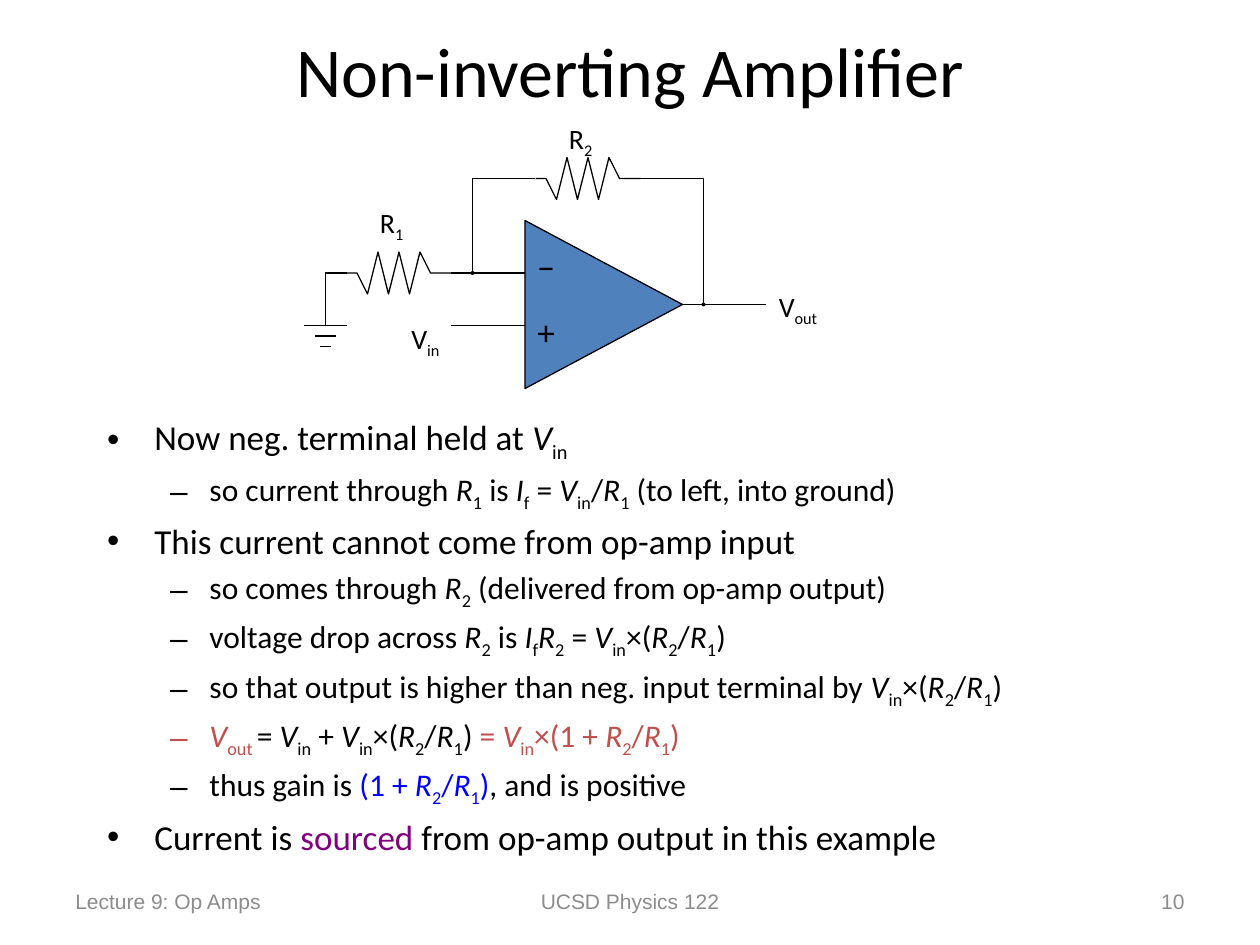
import pptx
import pptx.util
import pptx.dml.color
import pptx.enum.shapes
import pptx.enum.text
import pptx.oxml

RGB = pptx.dml.color.RGBColor
SHAPE = pptx.enum.shapes.MSO_SHAPE
ALIGN = pptx.enum.text.PP_ALIGN
ANCHOR = pptx.enum.text.MSO_ANCHOR
FIT = pptx.enum.text.MSO_AUTO_SIZE
Inches, Pt = pptx.util.Inches, pptx.util.Pt

BLACK = RGB(0x00, 0x00, 0x00)
GRAY = RGB(0x8C, 0x8C, 0x8C)
STEEL = RGB(0x4F, 0x81, 0xBD)
RED = RGB(0xC0, 0x50, 0x4D)
BLUE = RGB(0x00, 0x00, 0xFF)
PURPLE = RGB(0x80, 0x00, 0x80)
THIN = Pt(0.75)
UNIT = Inches(1) / 12  # one cell of the circuit grid

RATIO = "|*R|_2|/|*R|_1|)"
DROP = "|*V|_in|×(" + RATIO
# Level, then coloured pieces of marked text (see write)
POINTS = [
    (0, [(BLACK, "Now neg. terminal held at |*V|_in")]),
    (1, [(BLACK, "so current through |*R|_1| is |*I|_f| = |*V|_in|/|*R|_1"
                 "| (to left, into ground)")]),
    (0, [(BLACK, "This current cannot come from op-amp input")]),
    (1, [(BLACK, "so comes through |*R|_2| (delivered from op-amp output)")]),
    (1, [(BLACK, "voltage drop across |*R|_2| is |*I|_f|*R|_2| = " + DROP)]),
    (1, [(BLACK, "so that output is higher than neg. input terminal by "
                 + DROP)]),
    (1, [(RED, "*V|_out "), (BLACK, "= |*V|_in| + " + DROP + "| "),
         (RED, "= |*V|_in|×(1 + " + RATIO)]),
    (1, [(BLACK, "thus gain is "), (BLUE, "(1 + " + RATIO),
         (BLACK, ", and is positive")]),
    (0, [(BLACK, "Current is "), (PURPLE, "sourced"),
         (BLACK, " from op-amp output in this example")]),
]


def write(para, text, size, color=BLACK, face="Calibri"):
    """Add runs parted by |; a leading * means italic, _ means subscript."""
    for part in filter(None, text.split("|")):
        run = para.add_run()
        run.text = part.lstrip("*_")
        font = run.font
        font.name, font.size = face, Pt(size)
        font.color.rgb = color
        if part[0] == "*":
            font.italic = True
        elif part[0] == "_":
            run._r.get_or_add_rPr().set("baseline", "-25000")


def ink(shape, fill=None):
    shape.shadow.inherit = False
    shape.line.color.rgb = BLACK
    shape.line.width = THIN
    if fill is None:
        shape.fill.background()
    else:
        shape.fill.solid()
        shape.fill.fore_color.rgb = fill


class Grid:
    """Draws circuit parts at columns and rows counted from a corner."""

    def __init__(self, slide, left, top):
        self.shapes, self.left, self.top = slide.shapes, left, top

    def spot(self, col, row):
        return round(self.left + col * UNIT), round(self.top + row * UNIT)

    def wire(self, start, end):
        line = self.shapes.add_connector(
            pptx.enum.shapes.MSO_CONNECTOR.STRAIGHT,
            *self.spot(*start), *self.spot(*end))
        line.line.color.rgb = BLACK
        line.line.width = THIN
        line._element.spPr.append(
            pptx.oxml.parse_xml(
                '<a:effectLst xmlns:a='
                '"http://schemas.openxmlformats.org/drawingml/2006/main"/>'))

    def trace(self, points):
        first, *rest = [self.spot(*point) for point in points]
        pen = self.shapes.build_freeform(*first)
        pen.add_line_segments(rest, close=False)
        ink(pen.convert_to_shape())

    def coil(self, col, row):
        """Zigzag resistor, ten columns wide."""
        rise = [0, 0, 2, -2, 2, -2, 2, -2, 0]
        points = [(col + i, row + dy) for i, dy in enumerate(rise)]
        self.trace(points + [(col + 10, row)])

    def dot(self, col, row):
        size = Inches(0.02)
        x, y = self.spot(col, row)
        ink(self.shapes.add_shape(SHAPE.OVAL, x - size // 2, y - size // 2,
                                  size, size), BLACK)

    def label(self, col, row, text, wide, size=16):
        high = Inches(0.37 if size == 16 else 0.43)
        box = self.shapes.add_textbox(*self.spot(col, row), Inches(wide), high)
        frame = box.text_frame
        frame.word_wrap = False
        frame.auto_size = FIT.SHAPE_TO_FIT_TEXT
        write(frame.paragraphs[0], text, size)


def draw_amp(grid):
    """Triangle 15 columns wide and 16 rows high, pointing right."""
    amp = grid.shapes.add_shape(SHAPE.ISOSCELES_TRIANGLE,
                                *grid.spot(20.5, 10.5),
                                round(16 * UNIT), round(15 * UNIT))
    amp.rotation = 90
    ink(amp, STEEL)
    grid.label(21, 11.8, "−", 0.35, 20)
    grid.label(21, 18, "+", 0.36, 20)
    for row in (20, 15):
        grid.wire((21, row), (14, row))
    grid.wire((36, 18), (44, 18))


def draw_ground(grid, col, row):
    grid.wire((col, row - 1), (col, row))
    for step, half in enumerate((2, 1, 0.5)):
        grid.wire((col - half, row + step), (col + half, row + step))


def draw_circuit(slide, left, top):
    grid = Grid(slide, left, top)
    draw_amp(grid)
    grid.coil(4, 15)
    grid.coil(22, 6)
    grid.trace([(16, 15), (16, 6), (22, 6)])
    grid.trace([(32, 6), (38, 6), (38, 18)])
    grid.dot(16, 15)
    grid.dot(38, 18)
    draw_ground(grid, 2, 20)
    grid.wire((2, 19), (2, 15))
    grid.wire((4, 15), (2, 15))
    for col, row, text, wide in [(9, 19, "V|_in", 0.47),
                                 (44, 16, "V|_out", 0.56),
                                 (6, 8, "R|_1", 0.45),
                                 (24, 0, "R|_2", 0.45)]:
        grid.label(col, row, text, wide)


def place(shape, left, top, wide, high):
    shape.left, shape.top = round(left), round(top)
    shape.width, shape.height = round(wide), round(high)
    shape.text_frame.auto_size = FIT.NONE


def fill_title(shape, *box):
    place(shape, *box)
    shape.text_frame.vertical_anchor = ANCHOR.MIDDLE
    para = shape.text_frame.paragraphs[0]
    para.alignment = ALIGN.CENTER
    write(para, "Non-inverting Amplifier", 40)


def fill_body(shape, *box):
    place(shape, *box)
    frame = shape.text_frame
    for i, (level, pieces) in enumerate(POINTS):
        para = frame.add_paragraph() if i else frame.paragraphs[0]
        para.level = level
        for color, text in pieces:
            write(para, text, 18 if level else 20, color)


def draw_foot(slide, left, top, wide, high):
    """Three boxes: shares of the width for start and size."""
    for start, share, text, align in [
            (0, 0.26, "Lecture 9: Op Amps", ALIGN.LEFT),
            (0.324, 0.352, "UCSD Physics 122", ALIGN.CENTER),
            (0.74, 0.26, "10", ALIGN.RIGHT)]:
        box = slide.shapes.add_textbox(round(left + start * wide), top,
                                       round(share * wide), high)
        frame = box.text_frame
        frame.word_wrap = True
        frame.vertical_anchor = ANCHOR.MIDDLE
        frame.paragraphs[0].alignment = align
        write(frame.paragraphs[0], text, 12, GRAY, "Arial")


def main():
    deck = pptx.Presentation()
    deck.slide_width, deck.slide_height = Inches(10), Inches(7.5)
    wide, high = deck.slide_width, deck.slide_height
    slide = deck.slides.add_slide(deck.slide_layouts[1])
    side = 0.075 * wide
    fill_title(slide.shapes.title, side, -0.01 * high, 0.85 * wide, high / 6)
    fill_body(slide.placeholders[1], side, 3.25 / 7.5 * high,
              0.85 * wide, high / 2)
    draw_circuit(slide, 29 * UNIT, 11 * UNIT)
    draw_foot(slide, Inches(0.5), Inches(6.95), Inches(9), Inches(0.4))
    deck.save("out.pptx")


if __name__ == "__main__":
    main()
